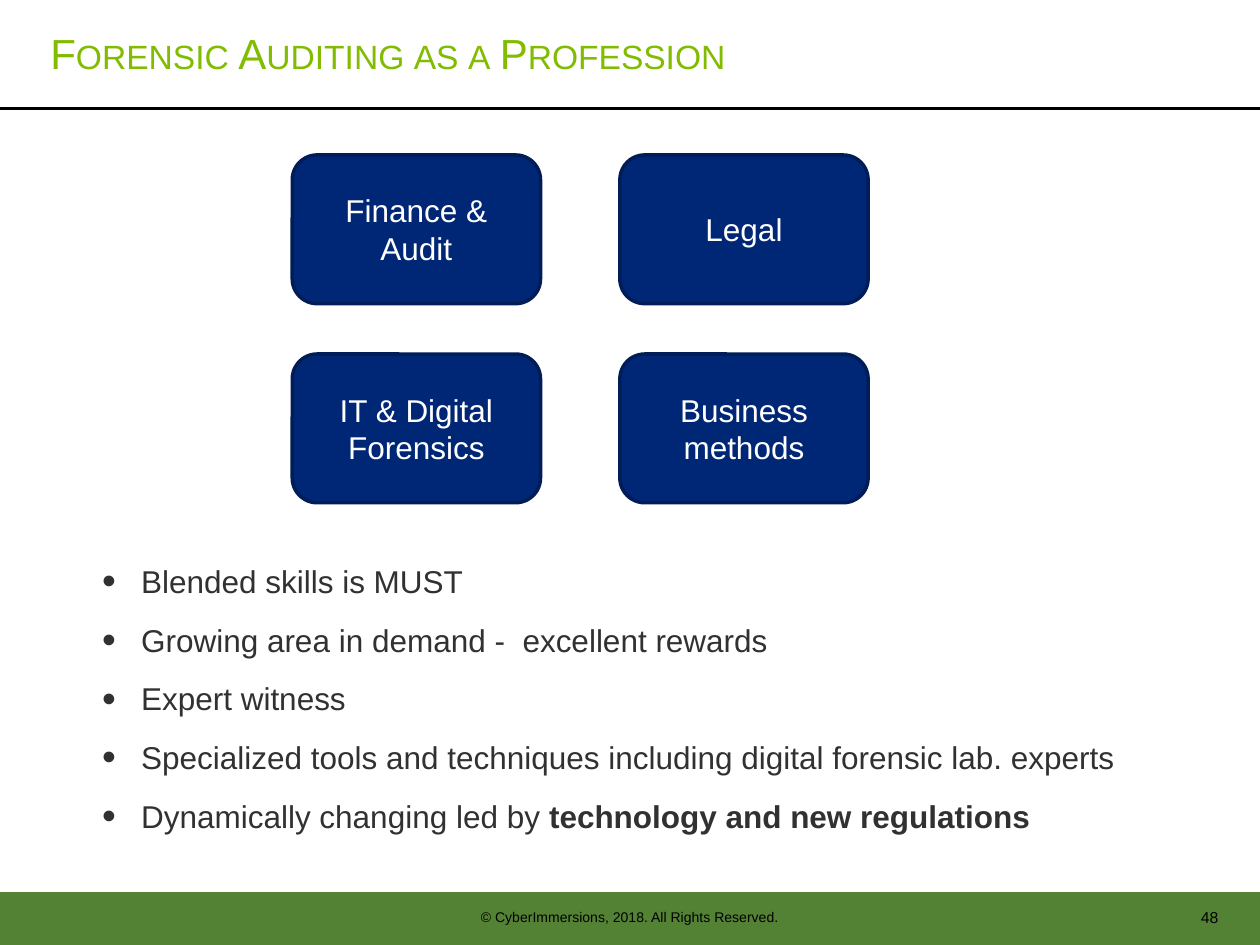
import pptx
import pptx.util
import pptx.dml.color
import pptx.enum.shapes
import pptx.enum.text
import pptx.oxml.ns
import lxml.etree

Inches = pptx.util.Inches
Pt = pptx.util.Pt
ALIGN = pptx.enum.text.PP_ALIGN
ANCHOR = pptx.enum.text.MSO_ANCHOR
SHAPE = pptx.enum.shapes.MSO_SHAPE

WIDTH, HEIGHT = 10, 7.5
GREEN, LIME, NAVY, NAVY_EDGE = "548235", "81BC00", "002776", "001D57"
BLACK, WHITE, GREY = "000000", "FFFFFF", "313131"

# Grid of skill cards, in inches
GRID_LEFT, GRID_TOP = 2.32, 1.23
COLUMN_STEP, ROW_STEP = 2.6, 1.58
CARD_WIDTH, CARD_HEIGHT = 1.97, 1.18
SKILLS = [
    [["Finance & Audit"], ["Legal"]],
    [["IT & Digital Forensics"], ["Business", "methods"]],
]

# Each point is plain text followed by bold text
POINTS = [
    ("Blended skills is MUST", ""),
    ("Growing area in demand -  excellent rewards", ""),
    ("Expert witness", ""),
    ("Specialized tools and techniques including digital forensic lab. experts", ""),
    ("Dynamically changing led by ", "technology and new regulations"),
]


def color(code):
    return pptx.dml.color.RGBColor.from_string(code)


def style(para, size, code, align=ALIGN.LEFT):
    para.alignment = align
    para.font.name = "Arial"
    para.font.size = Pt(size)
    para.font.color.rgb = color(code)


def add_block(page, kind, left, top, width, height, fill, edge=None):
    block = page.shapes.add_shape(
        kind, Inches(left), Inches(top), Inches(width), Inches(height))
    block.shadow.inherit = False
    block.fill.solid()
    block.fill.fore_color.rgb = color(fill)
    if edge:
        block.line.color.rgb = color(edge)
        block.line.width = Pt(2)
    else:
        block.line.fill.background()
    return block


def add_frame(page, left, top, width, height, anchor=ANCHOR.TOP):
    box = page.shapes.add_textbox(
        Inches(left), Inches(top), Inches(width), Inches(height))
    frame = box.text_frame
    frame.word_wrap = True
    frame.vertical_anchor = anchor
    frame.margin_left = frame.margin_right = 0
    frame.margin_top = frame.margin_bottom = 0
    return frame


def add_label(page, place, text, size, code, align=ALIGN.LEFT, anchor=ANCHOR.TOP):
    para = add_frame(page, *place, anchor).paragraphs[0]
    style(para, size, code, align)
    span = para.add_run()
    span.text = text
    return span


def add_rule(page, top):
    rule = page.shapes.add_connector(
        pptx.enum.shapes.MSO_CONNECTOR.STRAIGHT,
        0, Inches(top), Inches(WIDTH), Inches(top))
    rule.line.color.rgb = color(BLACK)
    rule.line.width = Pt(1.5)
    lxml.etree.SubElement(
        rule._element.spPr, pptx.oxml.ns.qn("a:effectLst"))


def add_card(page, column, row, lines):
    card = add_block(
        page, SHAPE.ROUNDED_RECTANGLE,
        GRID_LEFT + column * COLUMN_STEP, GRID_TOP + row * ROW_STEP,
        CARD_WIDTH, CARD_HEIGHT, NAVY, NAVY_EDGE)
    frame = card.text_frame
    frame.word_wrap = True
    frame.vertical_anchor = ANCHOR.MIDDLE
    frame.text = "\n".join(lines)
    for para in frame.paragraphs:
        style(para, 18, WHITE, ALIGN.CENTER)


def add_bullet(para):
    properties = para._p.get_or_add_pPr()
    properties.set("marL", str(Inches(0.57)))
    properties.set("indent", str(Inches(-0.31)))
    for tag, name, value in (("a:buSzPct", "val", "125000"),
                             ("a:buFont", "typeface", "Arial"),
                             ("a:buChar", "char", "•")):
        lxml.etree.SubElement(
            properties, pptx.oxml.ns.qn(tag)).set(name, value)


def add_points(page, points):
    frame = add_frame(page, 0.55, 4.46, 9.17, 2.36)
    for index, (plain, strong) in enumerate(points):
        para = frame.add_paragraph() if index else frame.paragraphs[0]
        add_bullet(para)
        style(para, 18, GREY)
        if index:
            para.space_before = Pt(12)
        para.add_run().text = plain
        if strong:
            span = para.add_run()
            span.text = strong
            span.font.bold = True


def main():
    deck = pptx.Presentation()
    deck.slide_width, deck.slide_height = Inches(WIDTH), Inches(HEIGHT)
    page = deck.slides.add_slide(deck.slide_layouts[6])

    # Footer band and header rule
    add_block(page, SHAPE.RECTANGLE, 0, 7.08, WIDTH, 0.42, GREEN)
    add_rule(page, 0.86)
    add_label(page, (3.62, 7.16, 2.76, 0.24),
              "© CyberImmersions, 2018. All Rights Reserved.",
              8, BLACK, ALIGN.CENTER, ANCHOR.MIDDLE)
    add_label(page, (8.8, 7.14, 0.87, 0.28), "48",
              9, BLACK, ALIGN.RIGHT, ANCHOR.MIDDLE)

    # Title in small capitals
    title = add_label(page, (0.4, 0.22, 7.94, 0.51),
                      "Forensic Auditing as a Profession", 24, LIME)
    title._r.get_or_add_rPr().set("cap", "small")

    # Key points
    add_points(page, POINTS)

    # Skill cards
    for row, skills in enumerate(SKILLS):
        for column, lines in enumerate(skills):
            add_card(page, column, row, lines)

    deck.save("out.pptx")


if __name__ == "__main__":
    main()
